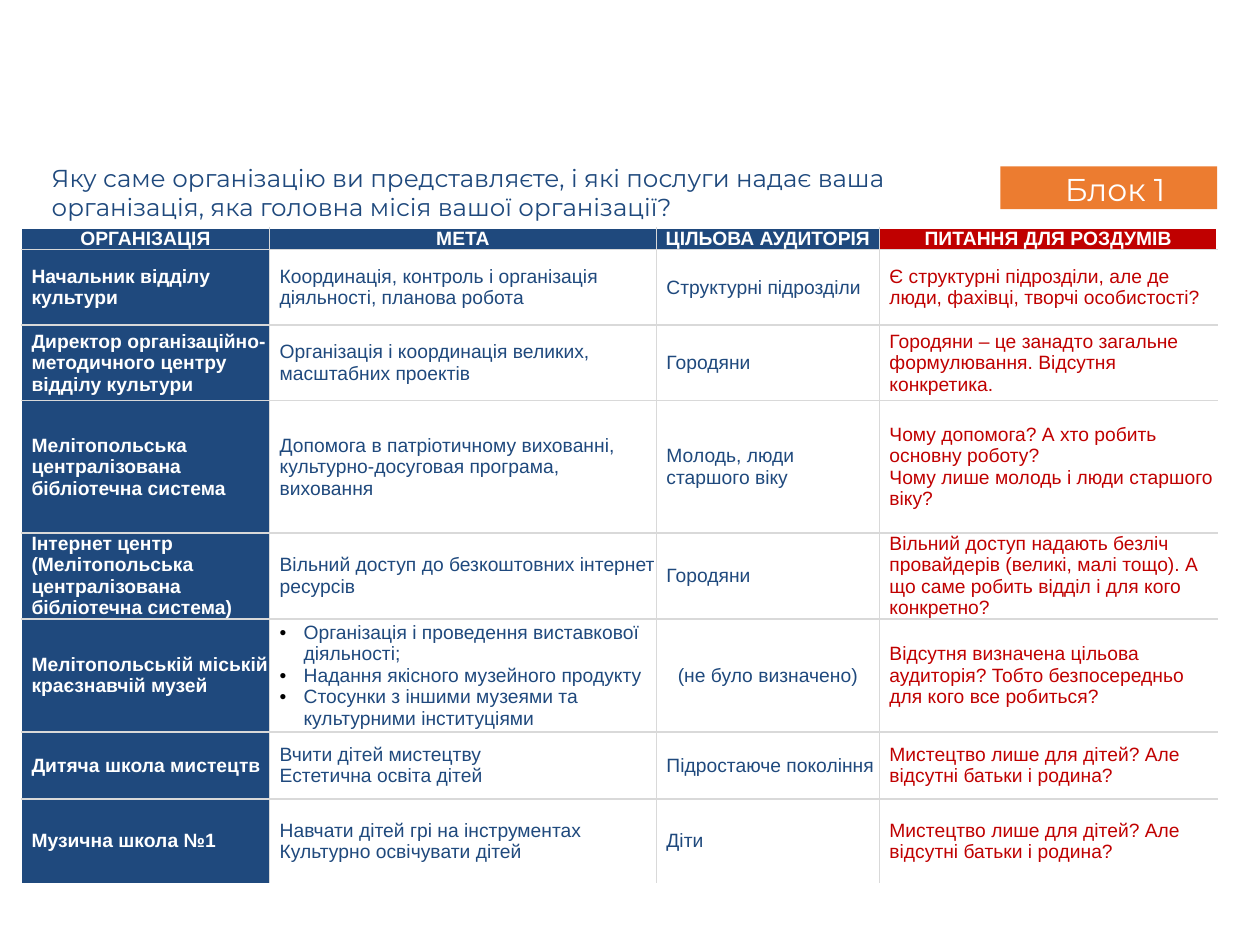
from lxml.etree import SubElement as Sub
from pptx import Presentation
from pptx.dml.color import RGBColor
from pptx.enum.shapes import MSO_SHAPE as Form
from pptx.enum.text import MSO_ANCHOR as Anchor, MSO_AUTO_SIZE as Fit, PP_ALIGN as Align
from pptx.oxml.ns import qn
from pptx.util import Inches, Pt

NAVY = RGBColor(0x1F, 0x49, 0x7D)
RED = RGBColor(0xC0, 0x00, 0x00)
ORANGE = RGBColor(0xEC, 0x7C, 0x30)
WHITE = RGBColor(0xFF, 0xFF, 0xFF)
BLACK = RGBColor(0x00, 0x00, 0x00)
GREY = RGBColor(0xD9, 0xD9, 0xD9)

TITLE = ("Яку саме організацію ви представляєте, і які послуги надає ваша "
         "організація, яка головна місія вашої організації?")
COLS = [1.97, 3.07, 1.77, 2.68]
HIGH = [0.15, 0.6, 0.6, 1.05, 0.45, 0.9, 0.53, 0.67]
UNSET = "(не було визначено)"
GOALS = """Організація і проведення виставкової діяльності;
Надання якісного музейного продукту
Стосунки з іншими музеями та культурними інституціями"""
FAMILY = "Мистецтво лише для дітей? Але відсутні батьки і родина?"
ROWS = [
    ["ОРГАНІЗАЦІЯ", "МЕТА", "ЦІЛЬОВА АУДИТОРІЯ", "ПИТАННЯ ДЛЯ РОЗДУМІВ"],
    ["Начальник відділу культури",
     "Координація, контроль і організація діяльності, планова робота",
     "Структурні підрозділи",
     "Є структурні підрозділи, але де люди, фахівці, творчі особистості?"],
    ["Директор організаційно-методичного центру відділу культури",
     "Організація і координація великих, масштабних проектів",
     "Городяни",
     "Городяни – це занадто загальне формулювання. Відсутня конкретика."],
    ["Мелітопольська централізована бібліотечна система",
     "Допомога в патріотичному вихованні, культурно-досуговая програма, виховання",
     "Молодь, люди старшого віку",
     "Чому допомога? А хто робить основну роботу?\n"
     "Чому лише молодь і люди старшого віку?"],
    ["Інтернет центр (Мелітопольська централізована бібліотечна система)",
     "Вільний доступ до безкоштовних інтернет ресурсів",
     "Городяни",
     "Вільний доступ надають безліч провайдерів (великі, малі тощо). "
     "А що саме робить відділ і для кого конкретно?"],
    ["Мелітопольській міській краєзнавчій музей",
     GOALS,
     UNSET,
     "Відсутня визначена цільова аудиторія? Тобто безпосередньо для кого все робиться?"],
    ["Дитяча школа мистецтв",
     "Вчити дітей мистецтву\nЕстетична освіта дітей",
     "Підростаюче покоління",
     FAMILY],
    ["Музична школа №1",
     "Навчати дітей грі на інструментах\nКультурно освічувати дітей",
     "Діти",
     FAMILY],
]


class Deck:
    head = "Montserrat"
    body = "Arial"

    def __init__(self, prs):
        self.slide = prs.slides.add_slide(prs.slide_layouts[5])

    def font(self, par, name, size, color, bold=False):
        font = par.font
        font.name, font.size, font.bold = name, Pt(size), bold
        font.color.rgb = color

    def indent(self, par, left, first=0):
        props = par._p.get_or_add_pPr()
        props.set("marL", str(Inches(left)))
        props.set("indent", str(Inches(first)))
        return props

    def bullet(self, par):
        props = self.indent(par, 0.27, -0.19)
        Sub(Sub(props, qn("a:buClr")), qn("a:srgbClr"), val=str(BLACK))
        Sub(props, qn("a:buFont"), typeface=self.body)
        Sub(props, qn("a:buChar"), char="•")

    def title(self, text, *box):
        shape = self.slide.shapes.title
        shape.left, shape.top, shape.width, shape.height = map(Inches, box)
        frame = shape.text_frame
        frame.text = text
        frame.word_wrap = True
        frame.auto_size = Fit.NONE
        frame.vertical_anchor = Anchor.TOP
        par = frame.paragraphs[0]
        par.alignment = Align.LEFT
        self.font(par, self.head, 14, NAVY)

    def badge(self, text, *box):
        shape = self.slide.shapes.add_shape(Form.RECTANGLE, *map(Inches, box))
        shape.shadow.inherit = False
        shape.fill.solid()
        shape.fill.fore_color.rgb = ORANGE
        shape.line.fill.background()
        frame = shape.text_frame
        frame.margin_left = frame.margin_right = frame.margin_bottom = 0
        frame.margin_top = Inches(0.03)
        frame.vertical_anchor = Anchor.TOP
        frame.text = text
        par = frame.paragraphs[0]
        par.alignment = Align.CENTER
        self.indent(par, 0.1)
        self.font(par, self.head, 18, WHITE)

    def edge(self, cell, side):
        line = Sub(cell._tc.get_or_add_tcPr(), qn(f"a:ln{side}"), w=str(Pt(1)))
        Sub(Sub(line, qn("a:solidFill")), qn("a:srgbClr"), val=str(GREY))

    def cell(self, cell, text, row, col):
        inner = {"L": col > 0, "R": col < len(COLS) - 1,
                 "T": row > 0, "B": row < len(HIGH) - 1}
        for side, shown in inner.items():
            if shown:
                self.edge(cell, side)
        strong = row == 0 or col == 0
        tone = RED if col == 3 else NAVY
        if strong:
            cell.fill.solid()
            cell.fill.fore_color.rgb = tone
        else:
            cell.fill.background()
        cell.margin_left = cell.margin_right = cell.margin_top = cell.margin_bottom = 0
        cell.vertical_anchor = Anchor.MIDDLE
        cell.text = text
        for par in cell.text_frame.paragraphs:
            if row == 0:
                par.alignment = Align.CENTER
            elif text == GOALS:
                self.bullet(par)
            else:
                self.indent(par, 0.17 if text == UNSET else 0.08)
            self.font(par, self.body, 11, WHITE if strong else tone, strong)

    def table(self, left, top):
        box = map(Inches, (left, top, sum(COLS), sum(HIGH)))
        grid = self.slide.shapes.add_table(len(HIGH), len(COLS), *box).table
        grid.first_row = grid.horz_banding = False
        for col, width in zip(grid.columns, COLS):
            col.width = Inches(width)
        for r, (height, texts) in enumerate(zip(HIGH, ROWS)):
            grid.rows[r].height = Inches(height)
            for c, text in enumerate(texts):
                self.cell(grid.cell(r, c), text, r, c)


def main():
    prs = Presentation()
    prs.slide_width, prs.slide_height = Inches(10), Inches(7.5)
    deck = Deck(prs)
    deck.badge("Блок 1", 7.94, 1.32, 1.72, 0.34)
    deck.title(TITLE, 0.31, 1.24, 7.49, 0.41)
    deck.table(0.17, 1.81)
    prs.save("out.pptx")


if __name__ == "__main__":
    main()
